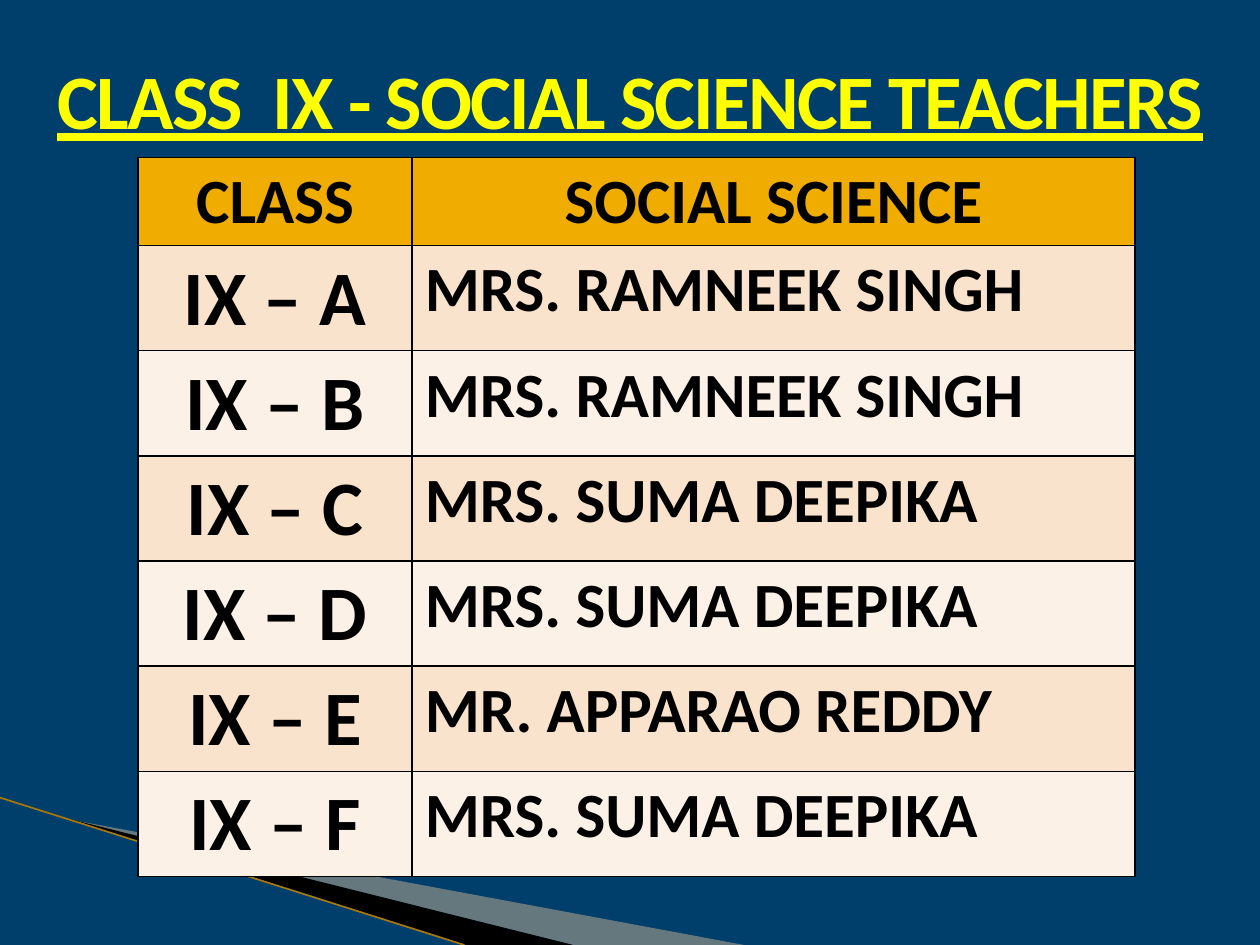
from lxml import etree
from pptx import Presentation
from pptx.dml.color import RGBColor
from pptx.enum import text
from pptx.oxml.ns import qn
from pptx.util import Cm, Pt

TEACHERS = [
    ("IX – A", "MRS. RAMNEEK SINGH"),
    ("IX – B", "MRS. RAMNEEK SINGH"),
    ("IX – C", "MRS. SUMA DEEPIKA"),
    ("IX – D", "MRS. SUMA DEEPIKA"),
    ("IX – E", "MR. APPARAO REDDY"),
    ("IX – F", "MRS. SUMA DEEPIKA"),
]


def rgb(value):
    """Return the colour for a hex string."""
    return RGBColor.from_string(value)


def fill_solid(fill, color):
    """Make a fill one plain colour."""
    fill.solid()
    fill.fore_color.rgb = rgb(color)


def add_run(p, words, size, color):
    """Add a bold Calibri run to a paragraph."""
    r = p.add_run()
    r.text = words
    r.font.name = "Calibri"
    r.font.size = Pt(size)
    r.font.bold = True
    r.font.color.rgb = rgb(color)
    return r


def set_frame(sp, frame):
    """Give a freeform a new frame while its outline stays in place."""
    left, top, width, height = [Cm(v) for v in frame]
    outline = sp._element.spPr.find(".//" + qn("a:path"))
    for pt in outline.iter(qn("a:pt")):
        pt.set("x", str(int(pt.get("x")) + sp.left - left))
        pt.set("y", str(int(pt.get("y")) + sp.top - top))
    outline.set("w", str(width))
    outline.set("h", str(height))
    sp.left, sp.top, sp.width, sp.height = left, top, width, height


def add_wedge(s, points, frame, color, alpha=None):
    """Draw a filled wedge through points given in centimetres."""
    start, *rest = [(Cm(x), Cm(y)) for x, y in points]
    builder = s.shapes.build_freeform(*start)
    builder.add_line_segments(rest, close=True)
    sp = builder.convert_to_shape()
    set_frame(sp, frame)
    sp.shadow.inherit = False
    sp.line.fill.background()
    fill_solid(sp.fill, color)
    if alpha is not None:
        clr = sp._element.spPr.find(".//" + qn("a:srgbClr"))
        etree.SubElement(clr, qn("a:alpha"), val=str(alpha * 1000))


def add_line(s, begin, end, color, width):
    """Draw a straight line between two points in centimetres."""
    line = s.shapes.add_connector(1, *[Cm(v) for v in begin + end])
    line.line.color.rgb = rgb(color)
    line.line.width = Pt(width)
    etree.SubElement(line._element.spPr, qn("a:effectLst"))


def set_title(s, words):
    """Place and format the slide title."""
    sp = s.shapes.title
    sp.left, sp.top, sp.width, sp.height = Cm(0), Cm(0), Cm(25.4), Cm(3.07)
    tf = sp.text_frame
    tf.word_wrap = True
    tf.auto_size = text.MSO_AUTO_SIZE.NONE
    tf.vertical_anchor = text.MSO_ANCHOR.TOP
    p = tf.paragraphs[0]
    p.alignment = text.PP_ALIGN.CENTER
    p.line_spacing = 1.5
    p.space_before = Pt(0)
    r = add_run(p, words, 44, "FFFF00")
    r.font.underline = True
    r._r.get_or_add_rPr().set("spc", "-100")


def set_borders(cell, color, width):
    """Give a cell a solid line on all four sides."""
    tcPr = cell._tc.get_or_add_tcPr()
    for i, side in enumerate(("lnL", "lnR", "lnT", "lnB")):
        ln = etree.Element(qn("a:" + side), w=str(Pt(width)))
        solid = etree.SubElement(ln, qn("a:solidFill"))
        etree.SubElement(solid, qn("a:srgbClr"), val=color)
        tcPr.insert(i, ln)


def set_cell(cell, words, size, color, centred):
    """Write and format one table cell."""
    cell.margin_bottom = Cm(0.07)
    p = cell.text_frame.paragraphs[0]
    p.alignment = text.PP_ALIGN.CENTER if centred else text.PP_ALIGN.LEFT
    add_run(p, words, size, "000000")
    fill_solid(cell.fill, color)
    set_borders(cell, "000000", 1)


def add_teacher_table(s):
    """Add the table of classes and their teachers."""
    rows = [("CLASS", "SOCIAL SCIENCE")] + TEACHERS
    frame = s.shapes.add_table(len(rows), 2, Cm(2.78), Cm(3.17), Cm(20.1), Cm(14.5))
    table = frame.table
    table.columns[0].width, table.columns[1].width = Cm(5.53), Cm(14.57)
    for i, (group, teacher) in enumerate(rows):
        header = i == 0
        color = "F0AD00" if header else ("FCF1E7", "F9E3CC")[i % 2]
        table.rows[i].height = Cm(1.78 if header else 2.12)
        set_cell(table.cell(i, 0), group, 36 if header else 44, color, True)
        set_cell(table.cell(i, 1), teacher, 36, color, header)


def main():
    """Build the slide and save it."""
    prs = Presentation()
    prs.slide_width, prs.slide_height = Cm(25.4), Cm(19.05)
    s = prs.slides.add_slide(prs.slide_layouts[5])
    fill_solid(s.background.fill, "003E6C")
    add_wedge(s, [(1.4, 16.52), (15, 19.05), (11.55, 19.05)],
              (1.98, 13.89, 10.57, 4.01), "FCCF9B", 40)
    add_wedge(s, [(1.36, 16.5), (11.55, 19.05), (9.4, 19.05)],
              (-0.15, 16.08, 10.57, 2.34), "000000")
    add_line(s, (0, 16.08), (9.36, 19.05), "A87808", 0.95)
    set_title(s, "CLASS  IX - SOCIAL SCIENCE TEACHERS")
    add_teacher_table(s)
    prs.save("out.pptx")


if __name__ == "__main__":
    main()
